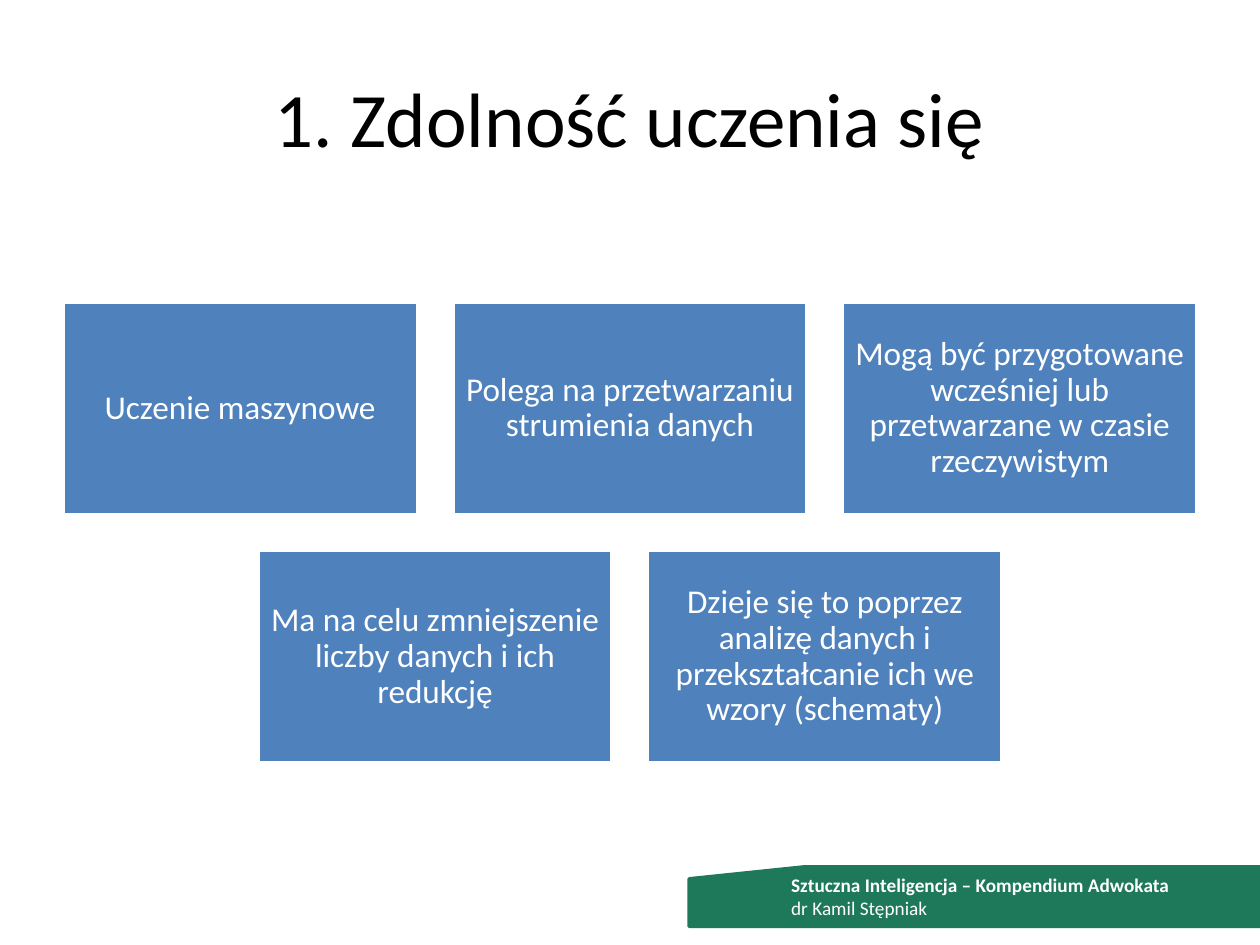
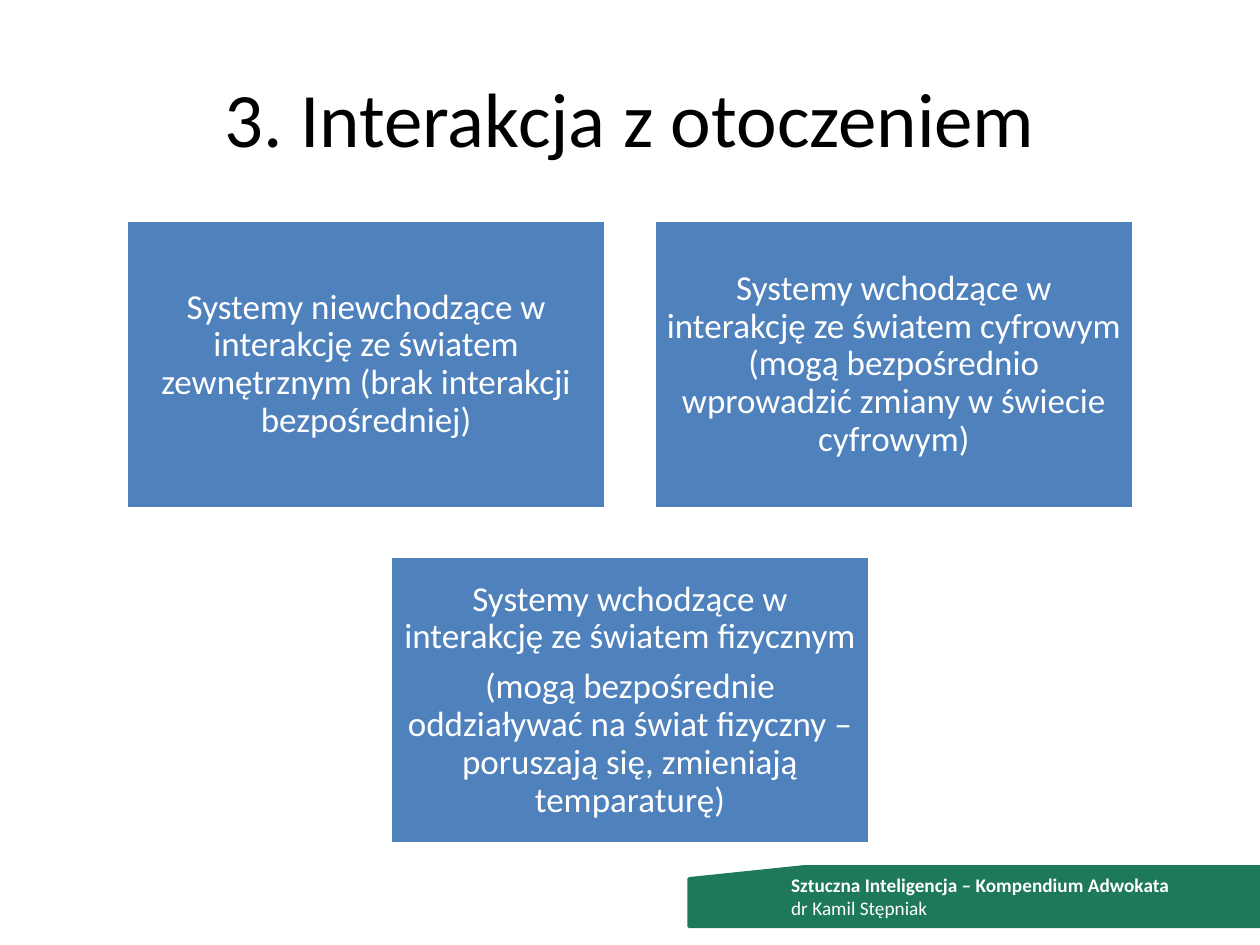
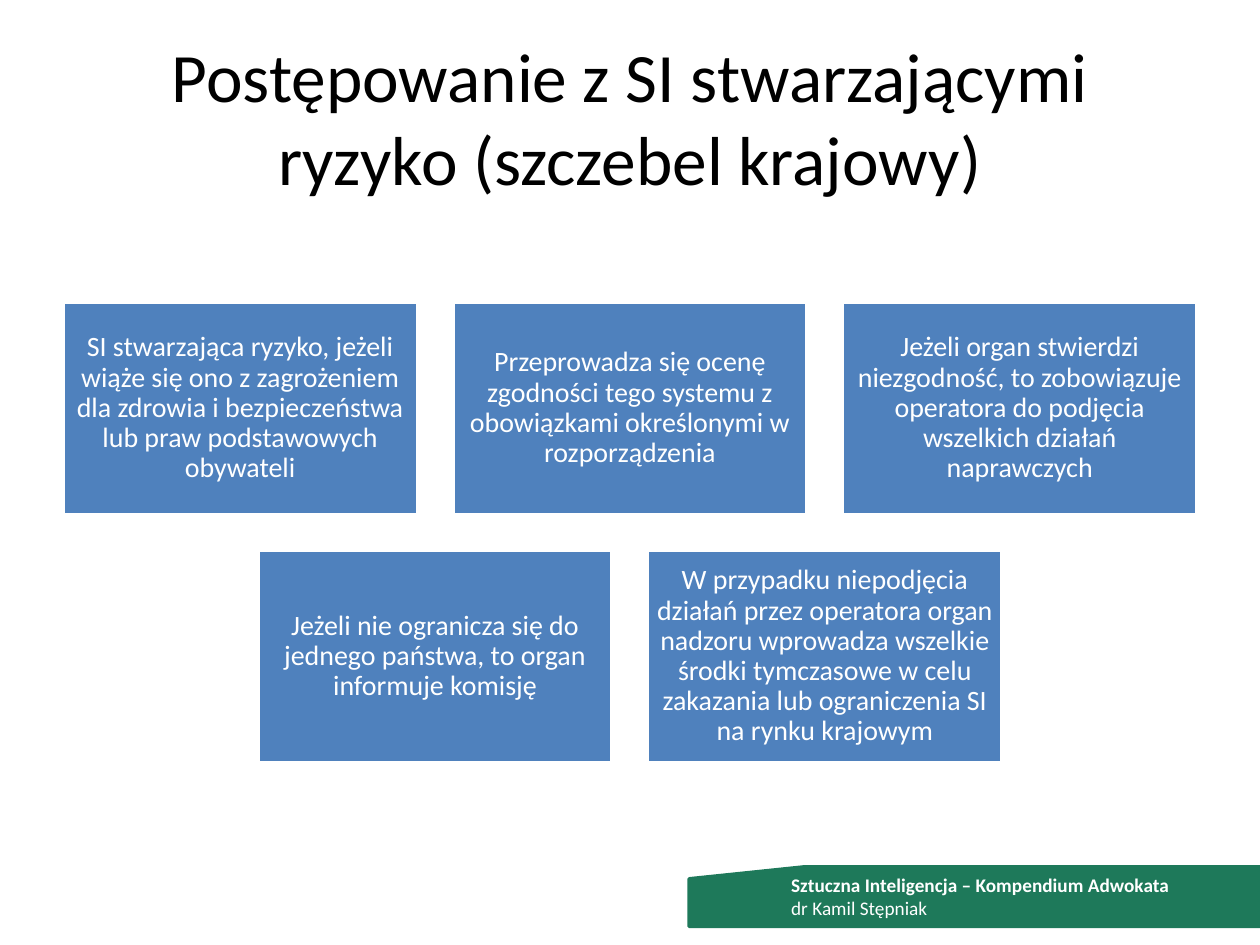
import pptx
import pptx.dml.color
import pptx.enum.shapes
import pptx.enum.text
import pptx.util

Pt = pptx.util.Pt
RGBColor = pptx.dml.color.RGBColor
SHAPE = pptx.enum.shapes.MSO_SHAPE
ANCHOR = pptx.enum.text.MSO_ANCHOR
ALIGN = pptx.enum.text.PP_ALIGN
AUTO_SIZE = pptx.enum.text.MSO_AUTO_SIZE

FONT = "Calibri"
BLACK = RGBColor(0x00, 0x00, 0x00)
WHITE = RGBColor(0xFF, 0xFF, 0xFF)
BLUE = RGBColor(0x4F, 0x81, 0xBD)
GREEN = RGBColor(0x1E, 0x79, 0x5A)

SLIDE_WIDTH, SLIDE_HEIGHT = 720, 540
MARGIN = 36
CONTENT_WIDTH = SLIDE_WIDTH - 2 * MARGIN
GRID_TOP, GRID_HEIGHT = 126, 356.4
CARD_RATIO = 0.6  # card height relative to its width
GAP_RATIO = 0.1  # gap relative to the card width
FOOTER_TOP, FOOTER_HEIGHT = 495.4, 34
FOOTER_LINES = "Sztuczna Inteligencja – Kompendium Adwokata\ndr Kamil Stępniak"

# Title, title size, card text size, rows of cards
SLIDES = [
    ("1. Zdolność uczenia się", 44, 19, [
        ["Uczenie maszynowe",
         "Polega na przetwarzaniu strumienia danych",
         "Mogą być przygotowane wcześniej lub przetwarzane w czasie rzeczywistym"],
        ["Ma na celu zmniejszenie liczby danych i ich redukcję",
         "Dzieje się to poprzez analizę danych i przekształcanie ich we wzory (schematy)"],
    ]),
    ("3. Interakcja z otoczeniem", 44, 20, [
        ["Systemy niewchodzące w interakcję ze światem zewnętrznym "
         "(brak interakcji bezpośredniej)",
         "Systemy wchodzące w interakcję ze światem cyfrowym "
         "(mogą bezpośrednio wprowadzić zmiany w świecie cyfrowym)"],
        ["Systemy wchodzące w interakcję ze światem fizycznym\n"
         "(mogą bezpośrednie oddziaływać na świat fizyczny – "
         "poruszają się, zmieniają temparaturę)"],
    ]),
    ("Postępowanie z SI stwarzającymi ryzyko (szczebel krajowy)", 39.6, 16, [
        ["SI stwarzająca ryzyko, jeżeli wiąże się ono z zagrożeniem dla zdrowia "
         "i bezpieczeństwa lub praw podstawowych obywateli",
         "Przeprowadza się ocenę zgodności tego systemu z obowiązkami "
         "określonymi w rozporządzenia",
         "Jeżeli organ stwierdzi niezgodność, to zobowiązuje operatora "
         "do podjęcia wszelkich działań naprawczych"],
        ["Jeżeli nie ogranicza się do jednego państwa, to organ informuje komisję",
         "W przypadku niepodjęcia działań przez operatora organ nadzoru wprowadza "
         "wszelkie środki tymczasowe w celu zakazania lub ograniczenia SI "
         "na rynku krajowym"],
    ]),
]


def format_runs(paragraph, size, color):
    for run in paragraph.runs:
        run.font.name = FONT
        run.font.size = Pt(size)
        run.font.color.rgb = color


def set_insets(text_frame, inset):
    text_frame.margin_left = text_frame.margin_right = Pt(inset)
    text_frame.margin_top = text_frame.margin_bottom = Pt(inset)


def add_box(slide, kind, left, top, width, height, fill, line):
    shape = slide.shapes.add_shape(kind, Pt(left), Pt(top), Pt(width), Pt(height))
    shape.shadow.inherit = False
    shape.fill.solid()
    shape.fill.fore_color.rgb = fill
    shape.line.color.rgb = line
    shape.line.width = Pt(2)
    return shape


def set_title(slide, text, size):
    title = slide.shapes.title
    title.left, title.top = Pt(MARGIN), Pt(21.6)
    title.width, title.height = Pt(CONTENT_WIDTH), Pt(90)
    text_frame = title.text_frame
    text_frame.text = text
    text_frame.auto_size = AUTO_SIZE.NONE
    text_frame.vertical_anchor = ANCHOR.MIDDLE
    paragraph = text_frame.paragraphs[0]
    paragraph.alignment = ALIGN.CENTER
    format_runs(paragraph, size, BLACK)


def add_card(slide, text, size, left, top, width, height):
    card = add_box(slide, SHAPE.RECTANGLE, left, top, width, height, BLUE, WHITE)
    text_frame = card.text_frame
    text_frame.text = text
    text_frame.word_wrap = True
    text_frame.vertical_anchor = ANCHOR.MIDDLE
    set_insets(text_frame, 0.3 * size)
    for paragraph in text_frame.paragraphs:
        paragraph.alignment = ALIGN.CENTER
        paragraph.line_spacing = 0.9
        paragraph.space_after = Pt(0.35 * size)
        format_runs(paragraph, size, WHITE)


def add_card_grid(slide, rows, size):
    """Fit the largest cards into the content area and centre every row."""
    columns = max(len(row) for row in rows)
    width = min(
        CONTENT_WIDTH / (columns + GAP_RATIO * (columns - 1)),
        GRID_HEIGHT / (CARD_RATIO * len(rows) + GAP_RATIO * (len(rows) - 1)),
    )
    height, gap = CARD_RATIO * width, GAP_RATIO * width
    used_height = len(rows) * (height + gap) - gap
    first_top = GRID_TOP + (GRID_HEIGHT - used_height) / 2
    for row_index, row in enumerate(rows):
        top = first_top + row_index * (height + gap)
        first_left = (SLIDE_WIDTH - len(row) * (width + gap) + gap) / 2
        for column, text in enumerate(row):
            left = first_left + column * (width + gap)
            add_card(slide, text, size, left, top, width, height)


def add_footer(slide):
    band_left, text_left = 393.8, 445
    add_box(slide, SHAPE.FLOWCHART_CARD, band_left, FOOTER_TOP,
            SLIDE_WIDTH - band_left, FOOTER_HEIGHT, GREEN, GREEN)
    text_box = slide.shapes.add_textbox(
        Pt(text_left), Pt(FOOTER_TOP), Pt(272), Pt(FOOTER_HEIGHT))
    text_box.text_frame.word_wrap = True
    text_box.text_frame.auto_size = AUTO_SIZE.SHAPE_TO_FIT_TEXT
    paragraph = text_box.text_frame.paragraphs[0]
    paragraph.text = FOOTER_LINES
    format_runs(paragraph, 11, WHITE)
    paragraph.runs[0].font.bold = True


def main():
    presentation = pptx.Presentation()
    presentation.slide_width = Pt(SLIDE_WIDTH)
    presentation.slide_height = Pt(SLIDE_HEIGHT)
    title_only = presentation.slide_layouts.get_by_name("Title Only")
    for title, title_size, card_size, rows in SLIDES:
        slide = presentation.slides.add_slide(title_only)
        set_title(slide, title, title_size)
        add_card_grid(slide, rows, card_size)
        add_footer(slide)
    presentation.save("out.pptx")


if __name__ == "__main__":
    main()
